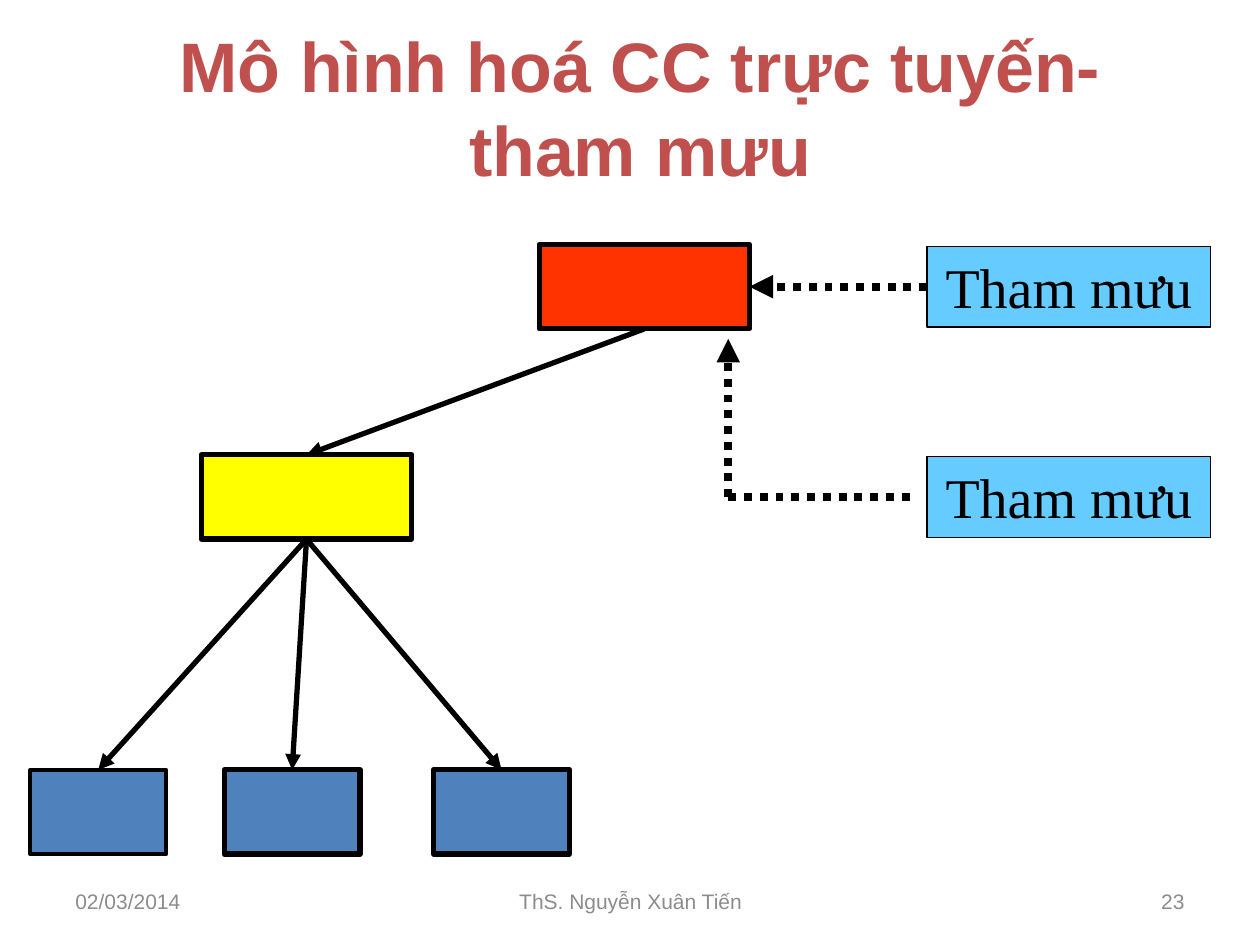
from lxml import etree
from pptx import Presentation
from pptx.dml.color import RGBColor
from pptx.enum.dml import MSO_LINE
from pptx.enum.shapes import MSO_CONNECTOR, MSO_SHAPE
from pptx.enum.text import MSO_ANCHOR, PP_ALIGN
from pptx.oxml.ns import qn
from pptx.util import Cm, Pt

RECT = MSO_SHAPE.RECTANGLE
LINE = MSO_CONNECTOR.STRAIGHT
DOTS = MSO_LINE.ROUND_DOT  # written as sysDot
MID, TOP = MSO_ANCHOR.MIDDLE, MSO_ANCHOR.TOP
LEFT, MIDST, RIGHT = PP_ALIGN.LEFT, PP_ALIGN.CENTER, PP_ALIGN.RIGHT
COLORS = {"title": "C0504D", "foot": "8C8C8C", "ink": "000000", "head": "FF3300",
          "lead": "FFFF00", "unit": "4F81BD", "staff": "66CCFF"}
COLORS = {name: RGBColor.from_string(code) for name, code in COLORS.items()}

deck = Presentation()
deck.slide_width, deck.slide_height = Cm(25.4), Cm(19.05)
slide = deck.slides.add_slide(deck.slide_layouts[6])
shapes = slide.shapes


def write(shape, text, size, color, align, font="Arial", bold=False):
    frame = shape.text_frame
    frame.text = text
    frame.word_wrap = True
    frame.vertical_anchor = MID
    para = frame.paragraphs[0]
    para.alignment = align
    face = para.runs[0].font
    face.name, face.size, face.bold = font, Pt(size), bold
    face.color.rgb = COLORS[color]


def link(start, end, width=3, dash=None, arrow=True):
    """Join two ends, each an (x, y) point in cm or a (box, side) pair."""
    spots = [(0, 0) if hasattr(e[0], "shape_id") else (Cm(e[0]), Cm(e[1]))
             for e in (start, end)]
    line = shapes.add_connector(LINE, *spots[0], *spots[1])
    for site, join in ((start, line.begin_connect), (end, line.end_connect)):
        if hasattr(site[0], "shape_id"):
            join(*site)
    line.line.color.rgb = COLORS["ink"]
    line.line.width = Pt(width)
    if dash:
        line.line.dash_style = dash
    if arrow:
        etree.SubElement(line.line._get_or_add_ln(), qn("a:tailEnd"), type="triangle")
    etree.SubElement(line._element.spPr, qn("a:effectLst"))


# Title and footer: text, left, top, width, height, size, colour, alignment, bold
texts = [
    ("Mô hình hoá CC trực tuyến-tham mưu", 2.11, 0.58, 21.59, 3.12, 40, "title", MIDST, True),
    ("02/03/2014", 1.27, 17.65, 5.92, 1.02, 12, "foot", LEFT, False),
    ("ThS. Nguyễn Xuân Tiến", 8.69, 17.65, 8.05, 1.02, 12, "foot", MIDST, False),
    ("23", 18.21, 17.65, 5.92, 1.02, 12, "foot", RIGHT, False),
]
for text, x, y, w, h, size, color, align, bold in texts:
    box = shapes.add_textbox(Cm(x), Cm(y), Cm(w), Cm(h))
    write(box, text, size, color, align, bold=bold)

# Boxes sit centred on three rows: left, row, width, height, fill, line width
ROWS = [5.78, 10.02, 16.37]
specs = [
    (10.87, 0, 4.24, 1.7, "head", 3),
    (4.06, 1, 4.24, 1.7, "lead", 3),
    (0.61, 2, 2.74, 1.7, "unit", 2.25),
    (4.52, 2, 2.74, 1.7, "unit", 3),
    (8.74, 2, 2.74, 1.7, "unit", 3),
    (18.69, 0, 5.72, 1.63, "staff", 0.75),
    (18.69, 1, 5.72, 1.63, "staff", 0.75),
]
boxes = []
for x, row, w, h, color, width in specs:
    box = shapes.add_shape(RECT, Cm(x), Cm(ROWS[row] - h / 2), Cm(w), Cm(h))
    box.shadow.inherit = False
    box.fill.solid()
    box.fill.fore_color.rgb = COLORS[color]
    box.line.color.rgb = COLORS["ink"]
    box.line.width = Pt(width)
    boxes.append(box)
head, lead, *units, aide, helper = boxes

for box in (aide, helper):
    write(box, "Tham mưu", 32, "ink", MIDST, font="Times New Roman")
    box.text_frame.word_wrap = False
    box.text_frame.vertical_anchor = TOP
    box.text_frame.paragraphs[0].space_before = Pt(3)

# Chain of command
link((head, 2), (lead, 0))
for unit in units:
    link((lead, 2), (unit, 0))

# Dotted advice lines
link((aide, 1), (head, 3), 4.5, DOTS)
bend = (14.68, ROWS[1])
link(bend, (18.49, ROWS[1]), 4.5, DOTS, arrow=False)
link(bend, (14.68, 6.83), 4.5, DOTS)

deck.save("out.pptx")
